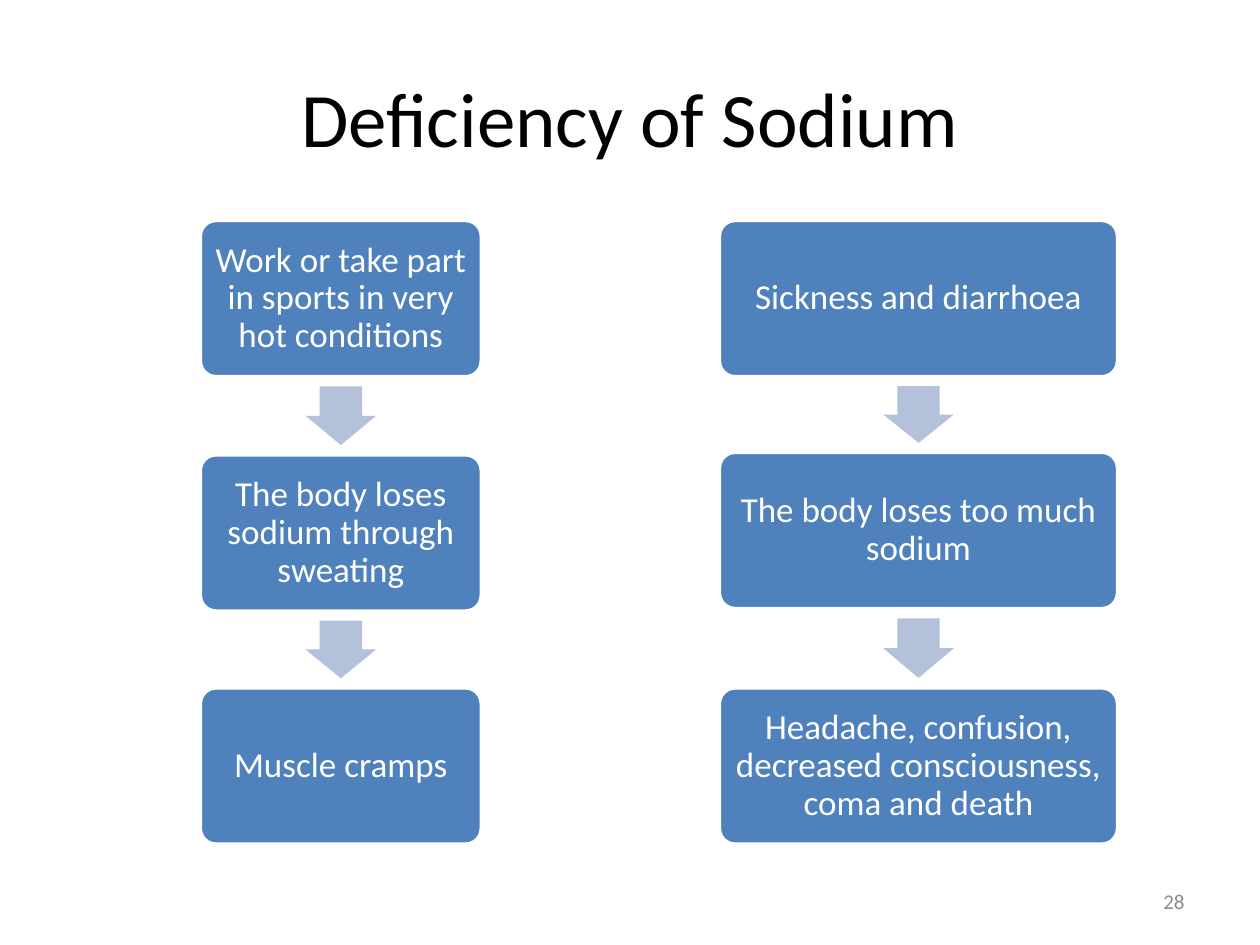
from pptx import Presentation
from pptx.dml.color import RGBColor
from pptx.enum.shapes import MSO_SHAPE as Shape
from pptx.enum.text import MSO_ANCHOR as Anchor, PP_ALIGN as Align
from pptx.util import Inches, Pt

BLACK = RGBColor(0x00, 0x00, 0x00)
WHITE = RGBColor(0xFF, 0xFF, 0xFF)
BLUE = RGBColor(0x4F, 0x81, 0xBD)
PALE = RGBColor(0xB3, 0xC1, 0xDB)
GREY = RGBColor(0x8C, 0x8C, 0x8C)

HIGH = 1.24
FLOWS = [
    (1.59, 2.23, [
        (1.75, "Work or take part in sports in very hot conditions"),
        (3.61, "The body loses sodium through sweating"),
        (5.46, "Muscle cramps"),
    ]),
    (5.71, 3.16, [
        (1.75, "Sickness and diarrhoea"),
        (3.59, "The body loses too much sodium"),
        (5.46, "Headache, confusion, decreased consciousness, coma and death"),
    ]),
]


def place(*sizes):
    return [Inches(size) for size in sizes]


def write(shape, text, size, color, align):
    frame = shape.text_frame
    frame.text = text
    frame.word_wrap = True
    frame.vertical_anchor = Anchor.MIDDLE
    para = frame.paragraphs[0]
    para.alignment = align
    font = para.runs[0].font
    font.name, font.size = "Calibri", Pt(size)
    font.color.rgb = color
    return para


def add_title(slide, text):
    title = slide.shapes.title
    title.left, title.top, title.width, title.height = place(0.5, 0.3, 9, 1.25)
    write(title, text, 44, BLACK, Align.CENTER)


def add_form(group, kind, box, fill):
    form = group.shapes.add_shape(kind, *place(*box))
    form.shadow.inherit = False
    form.fill.solid()
    form.fill.fore_color.rgb = fill
    return form


def add_step(group, left, top, width, text):
    step = add_form(group, Shape.ROUNDED_RECTANGLE, (left, top, width, HIGH), BLUE)
    step.adjustments[0] = 0.1
    step.line.color.rgb = WHITE
    step.line.width = Pt(2)
    frame = step.text_frame
    frame.margin_left = frame.margin_right = Inches(0.08)
    frame.margin_top = frame.margin_bottom = Inches(0.08)
    write(step, text, 20, WHITE, Align.CENTER).line_spacing = 0.9


def add_arrow(group, mid, start, end):
    long, wide = 0.75 * (end - start), 0.56
    box = (mid - long / 2, (start + end - wide) / 2, long, wide)
    arrow = add_form(group, Shape.RIGHT_ARROW, box, PALE)
    arrow.rotation = 90
    arrow.adjustments[0] = 0.6
    arrow.adjustments[1] = 0.5
    arrow.line.fill.background()


def add_flow(slide, left, width, steps):
    group = slide.shapes.add_group_shape()
    last = None
    for top, text in steps:
        if last is not None:
            add_arrow(group, left + width / 2, last + HIGH, top)
        add_step(group, left, top, width, text)
        last = top


def add_number(slide, text):
    box = slide.shapes.add_textbox(*place(7.17, 6.95, 2.33, 0.4))
    write(box, text, 12, GREY, Align.RIGHT)


def main():
    deck = Presentation()
    deck.slide_width, deck.slide_height = place(10, 7.5)
    slide = deck.slides.add_slide(deck.slide_layouts[5])
    add_title(slide, "Deficiency of Sodium")
    for left, width, steps in FLOWS:
        add_flow(slide, left, width, steps)
    add_number(slide, "28")
    deck.save("out.pptx")


if __name__ == "__main__":
    main()
